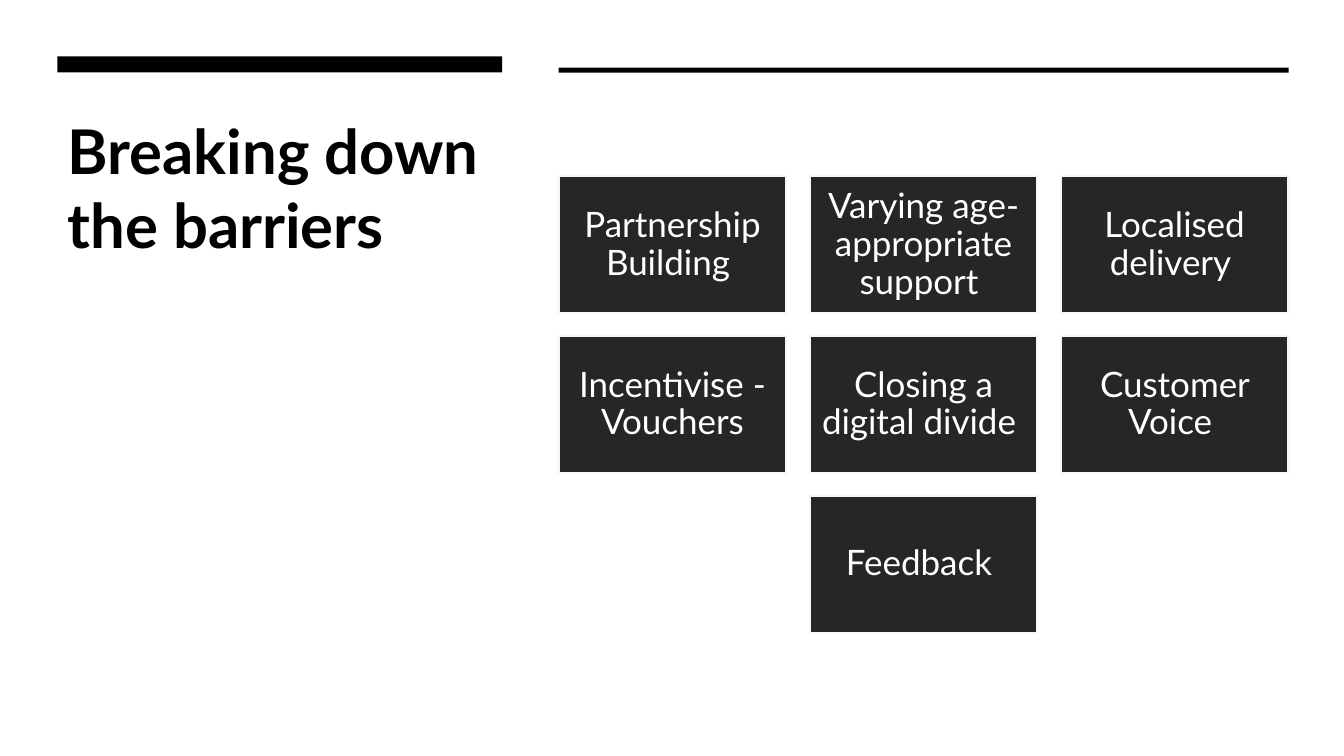
from pptx import Presentation
from pptx.dml.color import RGBColor
from pptx.enum import shapes, text
from pptx.util import Inches, Pt

BLACK = RGBColor(0x00, 0x00, 0x00)
CHARCOAL = RGBColor(0x26, 0x26, 0x26)
PALE = RGBColor(0xF7, 0xF7, 0xF7)
WHITE = RGBColor(0xFF, 0xFF, 0xFF)
FONT = "Lato"

HEADING = "Breaking down the barriers"
ACTIONS = [
    ["Partnership Building ", "Varying age-appropriate support ", "Localised delivery "],
    ["Incentivise - Vouchers", "Closing a digital divide ", "Customer Voice "],
    ["Feedback "],
]
RULES = [(0.57, 0.56, 4.41, 0.16), (5.54, 0.67, 7.24, 0.05)]

COLUMNS = 3
GRID_LEFT, GRID_TOP = 5.54, 1.75
CARD_WIDTH, CARD_HEIGHT = 2.26, 1.36
COLUMN_STEP, ROW_STEP = 2.49, 1.585


def add_run(paragraph, words, size, color, bold=False):
    run = paragraph.add_run()
    run.text = words
    run.font.name = FONT
    run.font.size = Pt(size)
    run.font.bold = bold
    run.font.color.rgb = color


def add_block(slide, left, top, width, height, fill):
    block = slide.shapes.add_shape(
        shapes.MSO_SHAPE.RECTANGLE, Inches(left), Inches(top), Inches(width), Inches(height)
    )
    block.shadow.inherit = False
    block.fill.solid()
    block.fill.fore_color.rgb = fill
    block.line.fill.background()
    return block


def add_heading(slide):
    heading = slide.shapes.title
    heading.left, heading.top = Inches(0.57), Inches(1.07)
    heading.width, heading.height = Inches(4.41), Inches(3.68)
    frame = heading.text_frame
    frame.word_wrap = True
    frame.auto_size = text.MSO_AUTO_SIZE.NONE
    frame.vertical_anchor = text.MSO_ANCHOR.TOP
    paragraph = frame.paragraphs[0]
    paragraph.alignment = text.PP_ALIGN.LEFT
    add_run(paragraph, HEADING, 44, BLACK, bold=True)


def add_card(slide, left, top, action):
    card = add_block(slide, left, top, CARD_WIDTH, CARD_HEIGHT, CHARCOAL)
    card.line.color.rgb = PALE
    card.line.width = Pt(1.5)
    frame = card.text_frame
    frame.word_wrap = True
    frame.vertical_anchor = text.MSO_ANCHOR.MIDDLE
    frame.margin_left = frame.margin_right = Inches(0.1)
    frame.margin_top = frame.margin_bottom = Inches(0.1)
    paragraph = frame.paragraphs[0]
    paragraph.alignment = text.PP_ALIGN.CENTER
    paragraph.line_spacing = 0.9
    add_run(paragraph, action, 25, WHITE)


def main():
    deck = Presentation()
    deck.slide_width, deck.slide_height = Inches(13.33), Inches(7.5)
    slide = deck.slides.add_slide(deck.slide_layouts.get_by_name("Title Only"))
    slide.background.fill.solid()
    slide.background.fill.fore_color.rgb = WHITE

    add_heading(slide)
    for rule in RULES:
        add_block(slide, *rule, BLACK)
    for row, actions in enumerate(ACTIONS):
        indent = (COLUMNS - len(actions)) / 2
        for column, action in enumerate(actions):
            left = GRID_LEFT + (indent + column) * COLUMN_STEP
            add_card(slide, left, GRID_TOP + row * ROW_STEP, action)

    deck.save("out.pptx")


if __name__ == "__main__":
    main()
